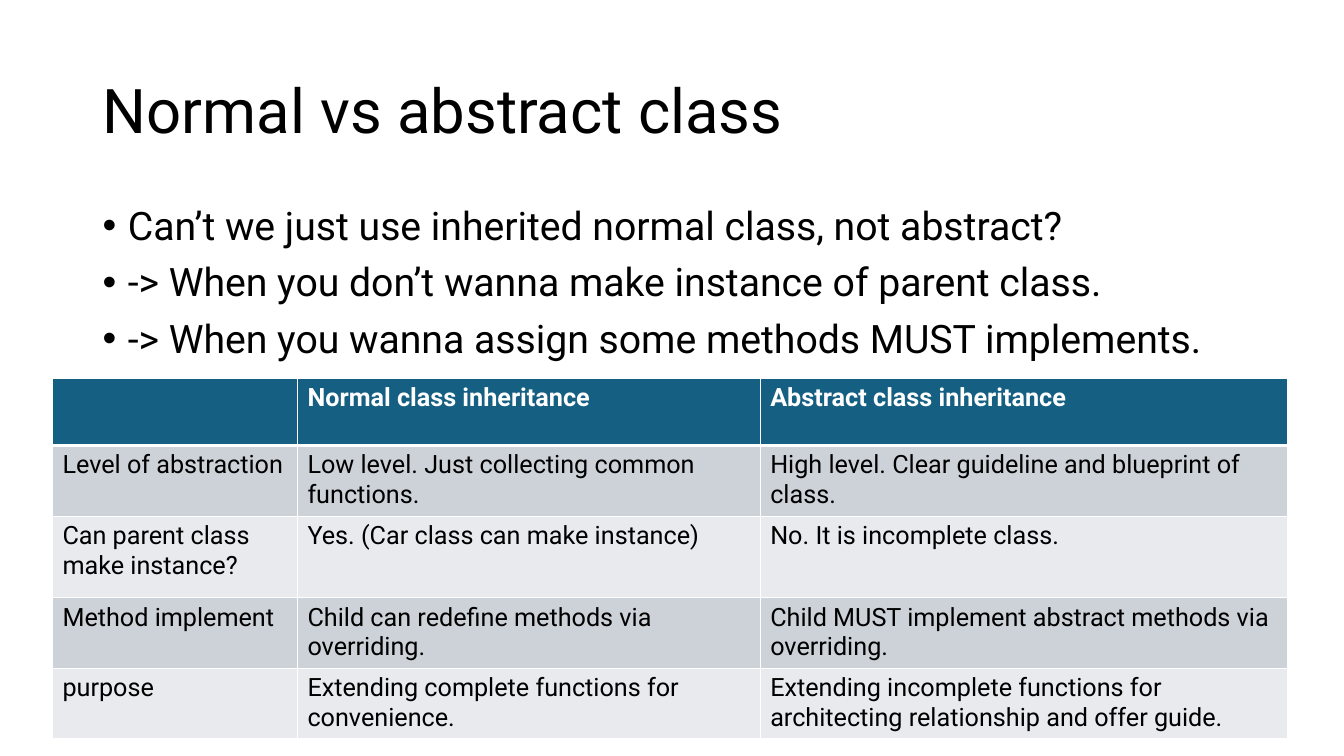
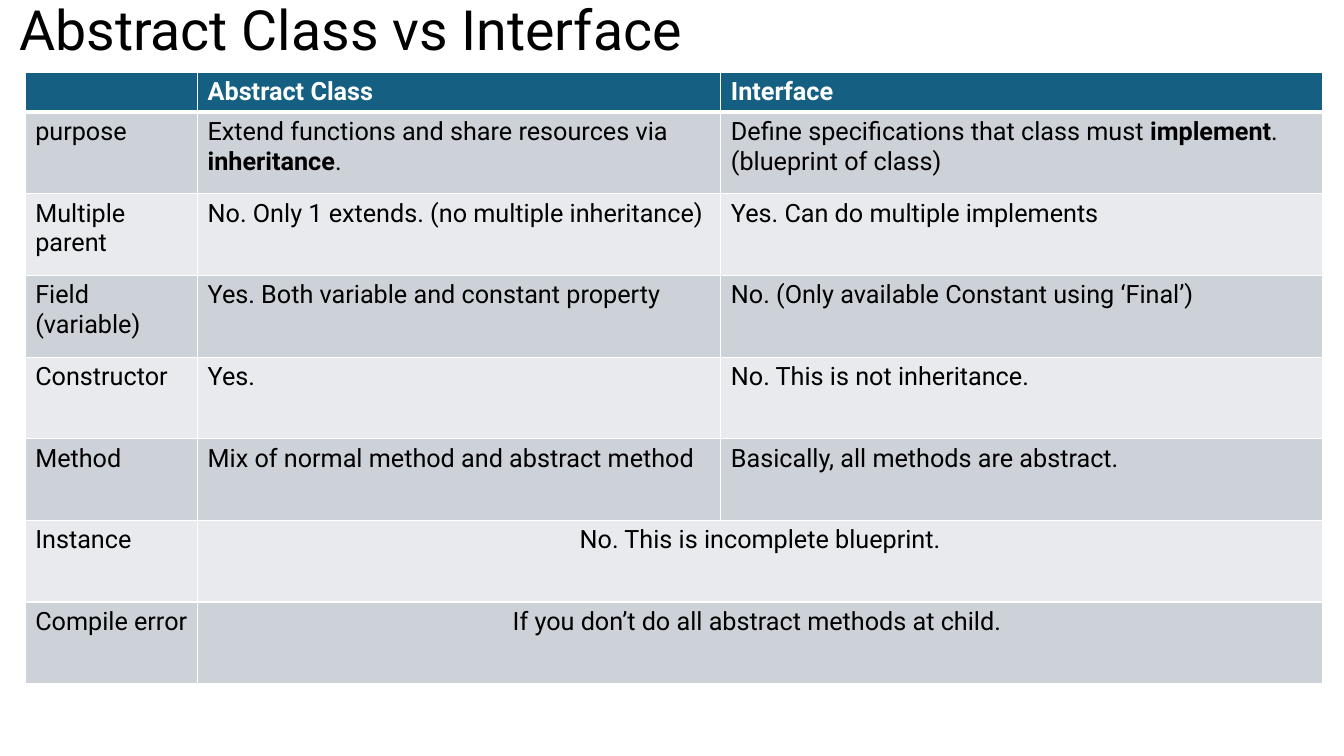
"""Build two slides that compare kinds of classes."""
from lxml.etree import SubElement
from pptx import Presentation
from pptx.dml.color import RGBColor
from pptx.enum.text import MSO_ANCHOR as Anchor, MSO_AUTO_SIZE as AutoSize, PP_ALIGN as Align
from pptx.oxml.ns import qn
from pptx.util import Inches, Pt

INHERITANCE_ROWS = [
    ["", "Normal class inheritance", "Abstract class inheritance"],
    ["Level of abstraction", "Low level. Just collecting common functions.",
     "High level. Clear guideline and blueprint of class."],
    ["Can parent class make instance?", "Yes. (Car class can make instance)",
     "No. It is incomplete class."],
    ["Method implement", "Child can redefine methods via overriding.",
     "Child MUST implement abstract methods via overriding."],
    ["purpose", "Extending complete functions for convenience.",
     "Extending incomplete functions for architecting relationship and offer guide."],
]
INTERFACE_ROWS = [
    ["", "Abstract Class", "Interface"],
    ["purpose", "Extend functions and share resources via **inheritance**.",
     "Define specifications that class must **implement**.\n(blueprint of class)"],
    ["Multiple parent", "No. Only 1 extends. (no multiple inheritance)",
     "Yes. Can do multiple implements"],
    ["Field (variable)", "Yes. Both variable and constant property",
     "No. (Only available Constant using ‘Final’)"],
    ["Constructor", "Yes.", "No. This is not inheritance."],
    ["Method", "Mix of normal method and abstract method",
     "Basically, all methods are abstract."],
    ["Instance", "No. This is incomplete blueprint.", None],
    ["Compile error", "If you don’t do all abstract methods at child. ", None],
]


def color(value):
    """Turn a hex string into a colour."""
    return RGBColor.from_string(value)


class Deck:
    """Hold the shared style and the current slide."""

    FONT = "Roboto"
    BLACK, WHITE, HEADER = "000000", "FFFFFF", "156082"
    BANDS = ("E8EAED", "CCD2D8")

    def __init__(self):
        """Start a widescreen presentation."""
        self.presentation = Presentation()
        self.presentation.slide_width = Inches(13.33)
        self.presentation.slide_height = Inches(7.5)
        self.slide = None

    def style(self, paragraph, size, ink=BLACK, bold=False):
        """Set the font of a paragraph."""
        font = paragraph.font
        font.name, font.size, font.bold = self.FONT, Pt(size), bold
        font.color.rgb = color(ink)

    def title_slide(self, text, box, size):
        """Add a slide and place its title."""
        self.slide = self.presentation.slides.add_slide(self.presentation.slide_layouts[5])
        title = self.slide.shapes.title
        title.left, title.top, title.width, title.height = map(Inches, box)
        frame = title.text_frame
        frame.text = text
        frame.auto_size = AutoSize.NONE
        frame.vertical_anchor = Anchor.MIDDLE
        paragraph = frame.paragraphs[0]
        paragraph.alignment, paragraph.line_spacing = Align.LEFT, 0.9
        self.style(paragraph, size)

    def bullets(self, lines, box, size):
        """Add a bulleted text box."""
        frame = self.slide.shapes.add_textbox(*map(Inches, box)).text_frame
        frame.word_wrap = True
        frame.text = "\n".join(lines)
        for index, paragraph in enumerate(frame.paragraphs):
            paragraph.line_spacing = 0.9
            if index:
                paragraph.space_before = Pt(10)
            properties = paragraph._p.get_or_add_pPr()
            properties.set("marL", str(Inches(0.25)))
            properties.set("indent", str(-Inches(0.25)))
            SubElement(properties, qn("a:buFont"), typeface="Arial")
            SubElement(properties, qn("a:buChar"), char="•")
            self.style(paragraph, size)

    def table(self, rows, box, widths, heights):
        """Add a banded table, where None extends the cell to its left."""
        shape = self.slide.shapes.add_table(len(rows), len(widths), *map(Inches, box))
        table = shape.table
        for column, width in zip(table.columns, widths):
            column.width = Inches(width)
        for row, height in zip(table.rows, heights):
            row.height = Inches(height)
        for row_index, texts in enumerate(rows):
            for column_index, text in enumerate(texts):
                cell = table.cell(row_index, column_index)
                self.borders(cell, row_index)
                cell.fill.solid()
                fill = self.BANDS[row_index % 2] if row_index else self.HEADER
                cell.fill.fore_color.rgb = color(fill)
                if text is None:
                    merged = table.cell(row_index, column_index - 1)
                    merged.merge(cell)
                    merged.text_frame.paragraphs[0].alignment = Align.CENTER
                else:
                    self.cell_text(cell, text, row_index == 0)

    def cell_text(self, cell, text, header):
        """Write the lines of a cell, with bold between double asterisks."""
        frame = cell.text_frame
        for index, line in enumerate(text.split("\n")):
            paragraph = frame.add_paragraph() if index else frame.paragraphs[0]
            self.style(paragraph, 18, self.WHITE if header else self.BLACK, header)
            for part_index, part in enumerate(line.split("**")):
                if part:
                    run = paragraph.add_run()
                    run.text = part
                    if part_index % 2:
                        run.font.bold = True

    def borders(self, cell, row_index):
        """Draw white cell borders, thicker below the header row."""
        properties = cell._tc.get_or_add_tcPr()
        for side in "LRTB":
            thick = (row_index, side) in ((0, "B"), (1, "T"))
            line = SubElement(properties, qn(f"a:ln{side}"), w=str(Pt(3 if thick else 1)))
            fill = SubElement(line, qn("a:solidFill"))
            SubElement(fill, qn("a:srgbClr"), val=self.WHITE)


def main():
    """Build and save the slides."""
    deck = Deck()
    deck.title_slide("Normal vs abstract class", (0.92, 0.4, 11.5, 1.45), 44)
    deck.bullets([
        "Can’t we just use inherited normal class, not abstract?",
        "-> When you don’t wanna make instance of parent class.",
        "-> When you wanna assign some methods MUST implements.",
    ], (0.92, 2, 11.5, 4.76), 28)
    deck.table(INHERITANCE_ROWS, (0.52, 3.75, 12.25, 3.49),
               (2.43, 4.59, 5.23), (0.67, 0.67, 0.81, 0.67, 0.67))

    deck.title_slide("Abstract Class vs Interface", (0.09, 0.15, 7.31, 0.35), 39.6)
    deck.table(INTERFACE_ROWS, (0.25, 0.72, 12.87, 6.04),
               (1.71, 5.19, 5.97), [0.37] + [0.81] * 7)
    deck.presentation.save("out.pptx")


if __name__ == "__main__":
    main()
